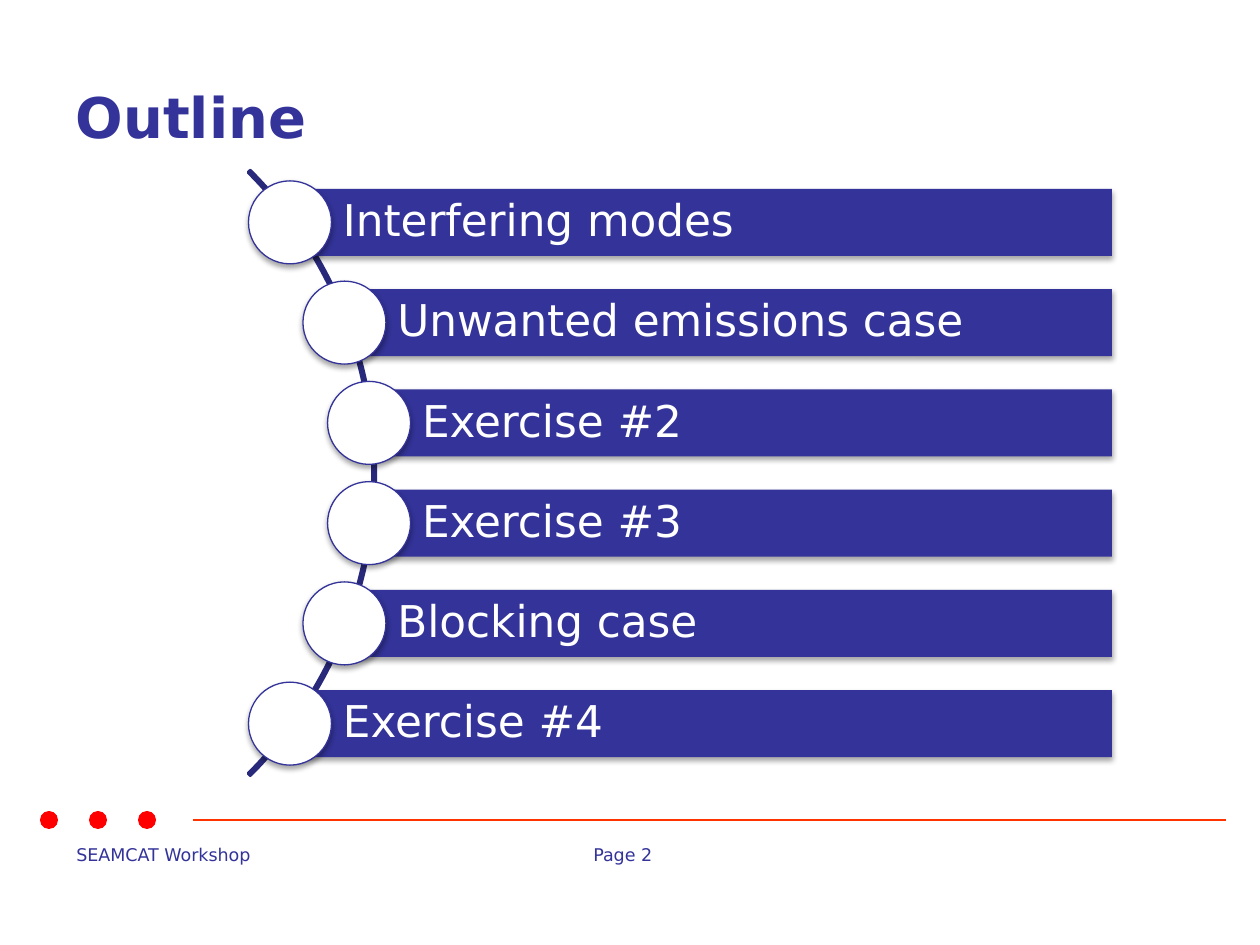
"""Builds the workshop outline slide: six topics strung along an arc."""

import math

import pptx
import pptx.dml.color
import pptx.enum.shapes
import pptx.enum.text
import pptx.oxml
import pptx.oxml.ns
import pptx.util

PX = 914400 / 126
FONT = "DejaVu Sans"
INDIGO = pptx.dml.color.RGBColor(0x33, 0x33, 0x99)
DARK_INDIGO = pptx.dml.color.RGBColor(0x29, 0x29, 0x7B)
WHITE = pptx.dml.color.RGBColor(0xFF, 0xFF, 0xFF)
RED = pptx.dml.color.RGBColor(0xFF, 0x00, 0x00)
ORANGE = pptx.dml.color.RGBColor(0xFF, 0x33, 0x00)

SHAPES = pptx.enum.shapes.MSO_SHAPE
MIDDLE = pptx.enum.text.MSO_ANCHOR.MIDDLE
SHADOW = (
    f'<a:outerShdw {pptx.oxml.ns.nsdecls("a")} blurRad="40000" dist="23000" '
    'dir="5400000" rotWithShape="0"><a:srgbClr val="000000">'
    '<a:alpha val="35000"/></a:srgbClr></a:outerShdw>'
)

TOPICS = [
    "Interfering modes",
    "Unwanted emissions case",
    "Exercise #2",
    "Exercise #3",
    "Blocking case",
    "Exercise #4",
]
ARC_X, ARC_Y = -52, 473
ARC_SIZE = 855
NODE_RADIUS = 424
TOPIC_PITCH = 100.25
BAR_RIGHT, BAR_HEIGHT = 1112, 67
NODE_SIZE = 83


def px(*lengths):
    return [pptx.util.Emu(round(length * PX)) for length in lengths]


def write_text(shape, text, size, color, bold=False, anchor=None,
               insets=None, line_spacing=None, wrap=True):
    frame = shape.text_frame
    frame.word_wrap = wrap
    if anchor is not None:
        frame.vertical_anchor = anchor
    if insets:
        (frame.margin_left, frame.margin_top,
         frame.margin_right, frame.margin_bottom) = px(*insets)
    paragraph = frame.paragraphs[0]
    paragraph.alignment = pptx.enum.text.PP_ALIGN.LEFT
    if line_spacing:
        paragraph.line_spacing = line_spacing
    run = paragraph.add_run()
    run.text = text
    run.font.name = FONT
    run.font.size = pptx.util.Pt(size)
    run.font.bold = bold
    run.font.color.rgb = color


def add_shape(slide, kind, box, fill=None, line=None, line_width=0.75, shadow=False):
    shape = slide.shapes.add_shape(kind, *px(*box))
    if fill is None:
        shape.fill.background()
    else:
        shape.fill.solid()
        shape.fill.fore_color.rgb = fill
    if line is None:
        shape.line.fill.background()
    else:
        shape.line.color.rgb = line
        shape.line.width = pptx.util.Pt(line_width)
    shape.shadow.inherit = False
    if shadow:
        effects = shape._element.spPr.find(pptx.oxml.ns.qn("a:effectLst"))
        effects.append(pptx.oxml.parse_xml(SHADOW))
    return shape


def add_title(slide, text):
    title = slide.shapes.title
    title.left, title.top, title.width, title.height = px(63, 38, 1134, 157)
    write_text(title, text, 32, INDIGO, bold=True, anchor=MIDDLE)


def add_label(slide, text, box):
    label = slide.shapes.add_textbox(*px(*box))
    write_text(label, text, 10, INDIGO, wrap=False)
    label.text_frame.auto_size = pptx.enum.text.MSO_AUTO_SIZE.SHAPE_TO_FIT_TEXT


def add_footer(slide):
    add_label(slide, "SEAMCAT Workshop", (64, 838, 205, 34))
    add_label(slide, "Page 2", (581, 838, 103, 34))
    rule = slide.shapes.add_connector(
        pptx.enum.shapes.MSO_CONNECTOR.STRAIGHT, *px(193, 820, 1226, 820))
    rule.line.color.rgb = ORANGE
    rule.line.width = pptx.util.Pt(0.75)
    rule._element.spPr.append(pptx.oxml.parse_xml(
        f'<a:effectLst {pptx.oxml.ns.nsdecls("a")}/>'))
    for index in range(3):
        add_shape(slide, SHAPES.OVAL, (40 + 49 * index, 811, 18, 18), fill=RED)


def add_arc(slide):
    corner = ARC_SIZE / 2
    arc = add_shape(slide, SHAPES.BLOCK_ARC,
                    (ARC_X - corner, ARC_Y - corner, ARC_SIZE, ARC_SIZE),
                    line=DARK_INDIGO, line_width=2)
    for index, value in enumerate((189, 27, 0.003)):
        arc.adjustments[index] = value


def add_topic(slide, text, offset):
    x = ARC_X + math.sqrt(NODE_RADIUS ** 2 - offset ** 2)
    y = ARC_Y + offset
    bar = add_shape(slide, SHAPES.RECTANGLE,
                    (x, y - BAR_HEIGHT / 2, BAR_RIGHT - x, BAR_HEIGHT),
                    fill=INDIGO, shadow=True)
    write_text(bar, text, 25, WHITE, anchor=MIDDLE,
               insets=(53, 9, 9, 9), line_spacing=0.9)
    add_shape(slide, SHAPES.OVAL,
              (x - NODE_SIZE / 2, y - NODE_SIZE / 2, NODE_SIZE, NODE_SIZE),
              fill=WHITE, line=INDIGO, shadow=True)


def main():
    presentation = pptx.Presentation()
    presentation.slide_width, presentation.slide_height = px(1260, 945)
    slide = presentation.slides.add_slide(presentation.slide_layouts[5])
    add_footer(slide)
    add_title(slide, "Outline")
    add_arc(slide)
    for index, topic in enumerate(TOPICS):
        add_topic(slide, topic, (index - (len(TOPICS) - 1) / 2) * TOPIC_PITCH)
    presentation.save("out.pptx")


if __name__ == "__main__":
    main()
